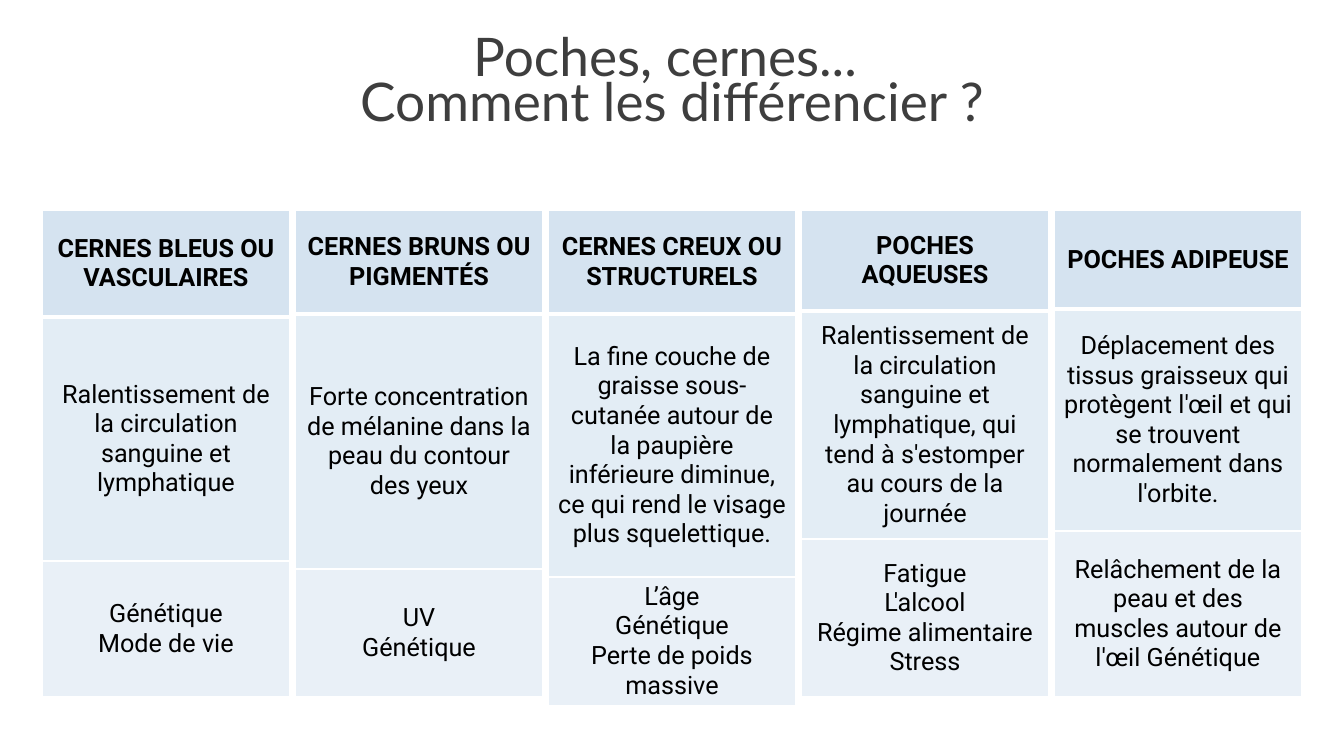
from lxml import etree
from pptx import Presentation
from pptx.dml.color import RGBColor
from pptx.enum.text import MSO_ANCHOR, MSO_AUTO_SIZE, PP_ALIGN
from pptx.oxml.ns import qn
from pptx.util import Pt

MIDDLE = MSO_ANCHOR.MIDDLE
CENTER = PP_ALIGN.CENTER
NO_FIT = MSO_AUTO_SIZE.NONE
TITLE_ONLY = 5

SCALE = 12192000 / 1344
COLORS = {
    "title": "3E3E3E",
    "text": "000000",
    "line": "FFFFFF",
    "head": "D5E3F0",
    "sign": "E3EDF5",
    "cause": "E9F0F7",
}
TITLE = ["Poches, cernes... ", "Comment les différencier ?"]

# Row heights, then heading, description and causes
CARDS = [
    ((107, 244, 136), ["CERNES BLEUS OU VASCULAIRES"],
     ["Ralentissement de la circulation sanguine et lymphatique"],
     ["Génétique", "Mode de vie"]),
    ((104, 255, 128), ["CERNES BRUNS OU PIGMENTÉS"],
     ["Forte concentration de mélanine dans la peau du contour des yeux"],
     ["UV", "Génétique"]),
    ((104, 263, 120), ["CERNES CREUX OU STRUCTURELS"],
     ["La fine couche de graisse sous-cutanée autour de la paupière "
      "inférieure diminue, ce qui rend le visage plus squelettique."],
     ["L’âge", "Génétique", "Perte de poids massive"]),
    ((101, 228, 158), ["POCHES AQUEUSES"],
     ["Ralentissement de la circulation sanguine et lymphatique, qui tend "
      "à s'estomper au cours de la journée"],
     ["Fatigue", "L'alcool", "Régime alimentaire", "Stress"]),
    ((99, 222, 166), ["POCHES ADIPEUSE"],
     ["Déplacement des tissus graisseux qui protègent l'œil et qui se "
      "trouvent normalement dans l'orbite."],
     ["Relâchement de la peau et des muscles autour de l'œil Génétique"]),
]


def px(count):
    return round(count * SCALE)


def rgb(name):
    return RGBColor.from_string(COLORS[name])


def write(frame, lines, font="Roboto", size=18, color="text", bold=False,
          space=None):
    for i, line in enumerate(lines):
        para = frame.paragraphs[0] if i == 0 else frame.add_paragraph()
        para.alignment = CENTER
        if space:
            para.line_spacing = Pt(space)
        run = para.add_run()
        run.text = line
        run.font.name = font
        run.font.size = Pt(size)
        run.font.bold = bold
        run.font.color.rgb = rgb(color)


class Deck:
    def __init__(self):
        self.file = Presentation()
        self.file.slide_width = px(1344)
        self.file.slide_height = px(756)
        self.slide = self.file.slides.add_slide(
            self.file.slide_layouts[TITLE_ONLY])

    def title(self, lines, x, y, w, h):
        box = self.slide.shapes.title
        box.left, box.top, box.width, box.height = map(px, (x, y, w, h))
        frame = box.text_frame
        frame.word_wrap = True
        frame.auto_size = NO_FIT
        frame.vertical_anchor = MIDDLE
        write(frame, lines, font="Lato", size=38, color="title", space=32)

    def edge(self, cell, bottom):
        props = cell._tc.get_or_add_tcPr()
        for i, side in enumerate("LRTB"):
            width = bottom if side == "B" else 1
            line = etree.Element(qn(f"a:ln{side}"), w=str(Pt(width)))
            fill = etree.SubElement(line, qn("a:solidFill"))
            etree.SubElement(fill, qn("a:srgbClr"), val=COLORS["line"])
            props.insert(i, line)

    def card(self, x, y, w, rows, parts):
        shape = self.slide.shapes.add_table(
            len(rows), 1, px(x), px(y), px(w), px(sum(rows)))
        table = shape.table
        table.first_row = False
        table.horz_banding = False
        for i, (tone, lines) in enumerate(zip(("head", "sign", "cause"), parts)):
            table.rows[i].height = px(rows[i])
            cell = table.cell(i, 0)
            cell.vertical_anchor = MIDDLE
            cell.fill.solid()
            cell.fill.fore_color.rgb = rgb(tone)
            self.edge(cell, 3 if tone == "head" else 1)
            write(cell.text_frame, lines, bold=tone == "head")


def main():
    deck = Deck()

    # Title
    deck.title(TITLE, 0, 37, 1344, 101)

    # One table per kind of dark circle or eye bag
    for i, (rows, *parts) in enumerate(CARDS):
        deck.card(42 + 253 * i, 210, 248, rows, parts)

    deck.file.save("out.pptx")


if __name__ == "__main__":
    main()
